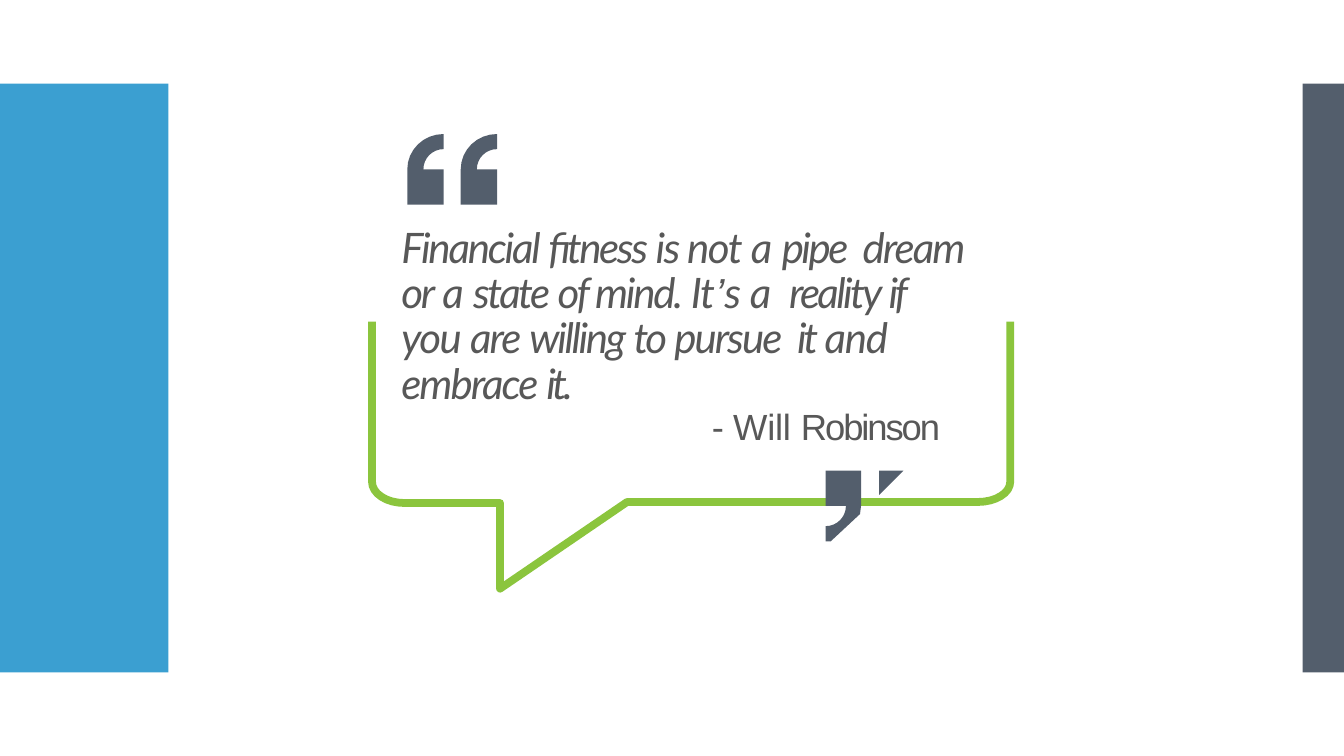
from dataclasses import dataclass
from math import cos, radians, sin

from lxml import etree
from pptx import Presentation
from pptx import util as u
from pptx.dml.color import RGBColor
from pptx.enum import shapes, text
from pptx.oxml.ns import qn


@dataclass(frozen=True)
class Theme:
    blue: str = "3B9FD1"
    slate: str = "535E6C"
    green: str = "8BC53D"
    ink: str = "585858"
    quote_font: str = "Lato"
    author_font: str = "Arial"
    quote_size: float = 30
    author_size: float = 26
    bubble_line: float = 5.56


# Words with their letter spacing in points
QUOTE = [
    ("Financial ", -1.6), ("fitness ", -1.7), ("is not ", -1.1), ("a ", -0.3),
    ("pipe", -1.8), (" ", 3.2), ("dream ", -1.4), ("or ", -1.5), ("a ", -0.3),
    ("state ", -1.8), ("of mind. ", -1.6), ("It", -0.9), ("’", -0.9),
    ("s ", -0.9), ("a", -0.3), (" ", 5.7), ("reality ", -1.9), ("if ", -2.6),
    ("you ", -1.1), ("are ", -1.4), ("willing ", -1.7), ("to ", -1.9),
    ("pursue", -1.4), (" ", 3.5), ("it ", -2.5), ("and ", -0.9),
    ("embrace ", -1.4), ("it.", -2.8),
]
AUTHOR = [("- ", -0.7), ("Will ", -0.2), ("Robinson", -1.5)]


def arc(x, y, across, down, start, end, steps=8):
    """Points along an ellipse, with angles in degrees clockwise from the right."""
    angles = [radians(start + (end - start) * i / steps) for i in range(steps + 1)]
    return [(x + across * cos(a), y + down * sin(a)) for a in angles]


def add_span(para, words, *, font, size, color, italic=False, spacing=0):
    span = para.add_run()
    span.text = words
    span.font.name = font
    span.font.size = u.Pt(size)
    span.font.italic = italic
    span.font.color.rgb = RGBColor.from_string(color)
    span._r.get_or_add_rPr().set("spc", str(round(spacing * 100)))


class SlideBuilder:
    def __init__(self, slide, theme):
        self.slide = slide
        self.theme = theme

    def paint(self, shape, color):
        shape.shadow.inherit = False
        shape.fill.solid()
        shape.fill.fore_color.rgb = RGBColor.from_string(color)
        shape.line.fill.background()

    def panel(self, left, top, width, height, color):
        bounds = [u.Inches(n) for n in (left, top, width, height)]
        kind = shapes.MSO_SHAPE.RECTANGLE
        self.paint(self.slide.shapes.add_shape(kind, *bounds), color)

    def outline(self, contours, close=True):
        builder = None
        for contour in contours:
            first, *rest = [(u.Inches(x), u.Inches(y)) for x, y in contour]
            if builder is None:
                builder = self.slide.shapes.build_freeform(*first)
            else:
                builder.move_to(*first)
            builder.add_line_segments(rest, close=close)
        return builder.convert_to_shape()

    def mark(self, *contours):
        self.paint(self.outline(contours), self.theme.slate)

    def bubble(self, points):
        shape = self.outline([points], close=False)
        shape.shadow.inherit = False
        shape.fill.background()
        shape.line.color.rgb = RGBColor.from_string(self.theme.green)
        shape.line.width = u.Pt(self.theme.bubble_line)
        etree.SubElement(shape.line._get_or_add_ln(), qn("a:round"))

    def quotation(self, left, top, width, height):
        theme = self.theme
        box = self.slide.shapes.add_textbox(
            *[u.Inches(n) for n in (left, top, width, height)])
        frame = box.text_frame
        frame.word_wrap = True
        frame.auto_size = text.MSO_AUTO_SIZE.SHAPE_TO_FIT_TEXT
        frame.margin_left = frame.margin_bottom = 0
        frame.margin_right = u.Inches(0.04)
        frame.margin_top = u.Inches(0.06)

        para = frame.paragraphs[0]
        para.line_spacing = 0.9
        para.space_before = u.Pt(4.6)
        self.indent(para, 0.01)
        for words, spacing in QUOTE:
            font = theme.author_font if words == "’" else theme.quote_font
            add_span(para, words, font=font, size=theme.quote_size,
                     color=theme.ink, italic=True, spacing=spacing)

        para = frame.add_paragraph()
        para.line_spacing = u.Pt(28.2)
        self.indent(para, 3.09)
        for words, spacing in AUTHOR:
            add_span(para, words, font=theme.author_font, size=theme.author_size,
                     color=theme.ink, spacing=spacing)

    def indent(self, para, left):
        properties = para._p.get_or_add_pPr()
        properties.set("marL", str(u.Inches(left)))
        properties.set("indent", "0")


def main():
    deck = Presentation()
    deck.slide_width, deck.slide_height = u.Inches(13.33), u.Inches(7.5)
    page = deck.slides.add_slide(deck.slide_layouts[6])
    theme = Theme()
    builder = SlideBuilder(page, theme)

    # Speech bubble, open at the top
    builder.bubble(
        [(10.02, 3.19)] + arc(9.7, 4.78, 0.32, 0.2, 0, 90)
        + [(6.22, 4.98), (4.96, 5.84), (4.96, 4.99)]
        + arc(4.01, 4.78, 0.32, 0.21, 90, 180) + [(3.69, 3.19)])

    # Closing quotation mark, with its second half cut off
    builder.mark(
        [(8.54, 4.67), (8.19, 4.67), (8.19, 5.02)]
        + arc(8.19, 5.02, 0.2, 0.2, 0, 90)
        + [(8.19, 5.37), (8.24, 5.37), (8.53, 5.1), (8.54, 5.02)],
        [(8.96, 4.67), (8.72, 4.67), (8.72, 4.91)])

    # Opening quotation marks
    for left in (4.57, 4.04):
        right = left + 0.36
        builder.mark(
            [(left, 2.03), (right, 2.03), (right, 1.68)]
            + arc(right, 1.68, 0.2, 0.2, 180, 270)
            + arc(right, 1.68, 0.36, 0.35, 270, 180))

    # Quotation and its author
    builder.quotation(3.97, 2.19, 5.65, 2.27)

    # Side panels
    builder.panel(0, 0.83, 1.67, 5.84, theme.blue)
    builder.panel(12.92, 0.83, 0.41, 5.84, theme.slate)

    deck.save("out.pptx")


if __name__ == "__main__":
    main()
